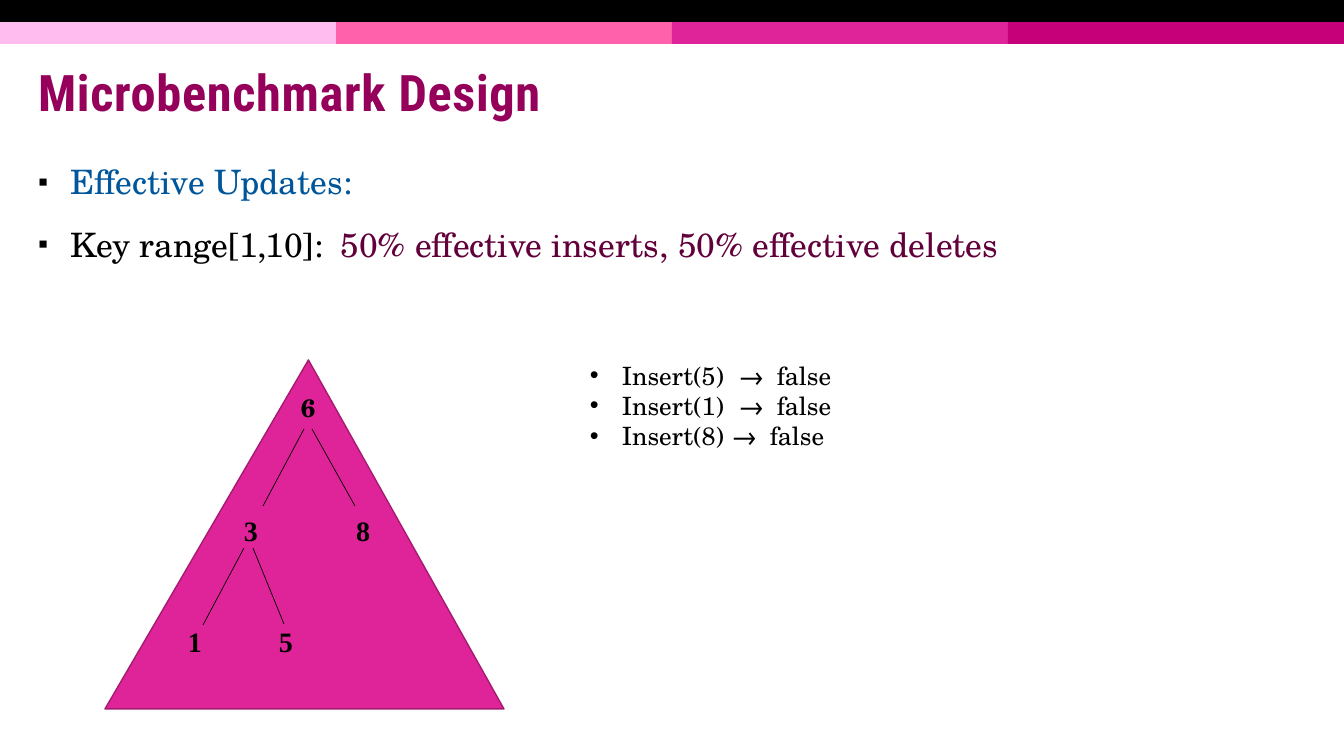
"""Build the Microbenchmark Design slide with its search tree and insert results."""
import dataclasses

import pptx
import pptx.dml.color
import pptx.enum.shapes
import pptx.enum.text
import pptx.oxml.ns
import pptx.util
from lxml import etree

TITLE = "Microbenchmark Design"
POINTS = [
    [("Effective Updates:", "blue")],
    [("Key range[1,10]:\t", "black"),
     ("50% effective inserts, 50% effective deletes", "plum")],
]
CALLS = [
    ("Insert(5)\t→\tfalse", (149, 187)),
    ("Insert(1)\t→\tfalse", (149, 187)),
    ("Insert(8)\t→\tfalse", (142, 180)),
]
NODES = [
    ("6", 308, 407, "serif", 18),
    ("3", 251, 530, "roman", 20),
    ("8", 363, 530, "roman", 20),
    ("1", 195, 641, "roman", 20),
    ("5", 286, 641, "roman", 20),
]
EDGES = [
    (304, 429, 263, 506),
    (312, 429, 355, 506),
    (244, 548, 203, 625),
    (253, 548, 284, 624),
]


@dataclasses.dataclass(frozen=True)
class Theme:
    head: str = "Roboto Condensed"
    serif: str = "TeX Gyre Schola"
    roman: str = "Times New Roman"
    black: str = "000000"
    wine: str = "94005A"
    blue: str = "00569B"
    plum: str = "62003C"
    pink: str = "DE2498"
    edge: str = "A41B70"
    bands: tuple = ("FFBDEF", "FF62AA", "DE2498", "C50078")
    title: int = 36
    body: int = 24
    note: int = 18


THEME = Theme()
SHAPE = pptx.enum.shapes.MSO_SHAPE
ALIGN = pptx.enum.text.PP_ALIGN
ANCHOR = pptx.enum.text.MSO_ANCHOR
WIDE, HIGH = 1344, 756


def px(num):
    return pptx.util.Emu(round(num * 914400 / 100.8))


def rgb(code):
    return pptx.dml.color.RGBColor.from_string(code)


def place(shape, left, top, width, height):
    shape.left, shape.top = px(left), px(top)
    shape.width, shape.height = px(width), px(height)


def setup(shape, anchor=ANCHOR.TOP):
    frame = shape.text_frame
    frame.word_wrap = True
    frame.auto_size = pptx.enum.text.MSO_AUTO_SIZE.NONE
    frame.vertical_anchor = anchor
    return frame


def para(frame, index):
    return frame.paragraphs[0] if index == 0 else frame.add_paragraph()


def write(line, text, font="serif", size=18, color="black", bold=False):
    run = line.add_run()
    run.text = text
    run.font.name = getattr(THEME, font)
    run.font.size = pptx.util.Pt(size)
    run.font.bold = bold
    run.font.color.rgb = rgb(getattr(THEME, color))
    return run


def child(parent, tag, **attrs):
    node = etree.SubElement(parent, pptx.oxml.ns.qn("a:" + tag))
    for key, value in attrs.items():
        node.set(key, str(value))
    return node


def bullet(line, mark, indent, scale=100, stops=()):
    props = line._p.get_or_add_pPr()
    props.set("marL", str(px(indent)))
    props.set("indent", str(-px(indent)))
    child(child(props, "buClr"), "srgbClr", val=THEME.black)
    child(props, "buSzPct", val=scale * 1000)
    child(props, "buFont", typeface="Arial")
    child(props, "buChar", char=mark)
    if stops:
        tabs = child(props, "tabLst")
        for stop in stops:
            child(tabs, "tab", pos=px(stop), algn="l")


def block(slide, kind, box, fill, line=None):
    shape = slide.shapes.add_shape(kind, *map(px, box))
    shape.shadow.inherit = False
    shape.fill.solid()
    shape.fill.fore_color.rgb = rgb(fill)
    if line:
        shape.line.color.rgb = rgb(line)
        shape.line.width = pptx.util.Pt(1)
    else:
        shape.line.fill.background()
    return shape


def header(slide):
    step = WIDE // len(THEME.bands)
    for col, fill in enumerate(THEME.bands):
        block(slide, SHAPE.RECTANGLE, (col * step, 22, step, 22), fill)
    block(slide, SHAPE.RECTANGLE, (0, 0, WIDE, 22), THEME.black)


def prose(slide):
    title, body = slide.placeholders
    place(title, 28, 47, 1275, 99)
    line = setup(title, ANCHOR.MIDDLE).paragraphs[0]
    line.alignment = ALIGN.LEFT
    line.line_spacing = 0.85
    run = write(line, TITLE, font="head", size=THEME.title, color="wine", bold=True)
    run.font._element.set("spc", "50")

    place(body, 28, 156, 1275, 507)
    frame = setup(body)
    for row, parts in enumerate(POINTS):
        line = para(frame, row)
        bullet(line, "▪", 32, scale=85)
        line.space_before = pptx.util.Pt(8 if row else 0)
        line.space_after = pptx.util.Pt(8)
        for text, color in parts:
            write(line, text, size=THEME.body, color=color)


def tree(slide):
    hull = block(slide, SHAPE.ISOSCELES_TRIANGLE, (105, 360, 399, 349),
                 THEME.pink, THEME.edge)
    hull.adjustments[0] = 0.51
    for text, mid, level, font, size in NODES:
        box = slide.shapes.add_textbox(*map(px, (mid - 22, level - 22, 44, 44)))
        line = setup(box, ANCHOR.MIDDLE).paragraphs[0]
        line.alignment = ALIGN.CENTER
        write(line, text, font=font, size=size, bold=True)
    for ends in EDGES:
        link = slide.shapes.add_connector(
            pptx.enum.shapes.MSO_CONNECTOR.STRAIGHT, *map(px, ends))
        link.line.color.rgb = rgb(THEME.black)
        link.line.width = pptx.util.Pt(0.5)
        child(link._element.spPr, "effectLst")


def calls(slide):
    frame = setup(slide.shapes.add_textbox(*map(px, (580, 355, 326, 102))))
    for row, (text, stops) in enumerate(CALLS):
        line = para(frame, row)
        bullet(line, "•", 32, stops=stops)
        write(line, text, size=THEME.note)


def main():
    deck = pptx.Presentation()
    deck.slide_width, deck.slide_height = px(WIDE), px(HIGH)
    slide = deck.slides.add_slide(deck.slide_layouts[1])
    header(slide)
    prose(slide)
    tree(slide)
    calls(slide)
    deck.save("out.pptx")


if __name__ == "__main__":
    main()
